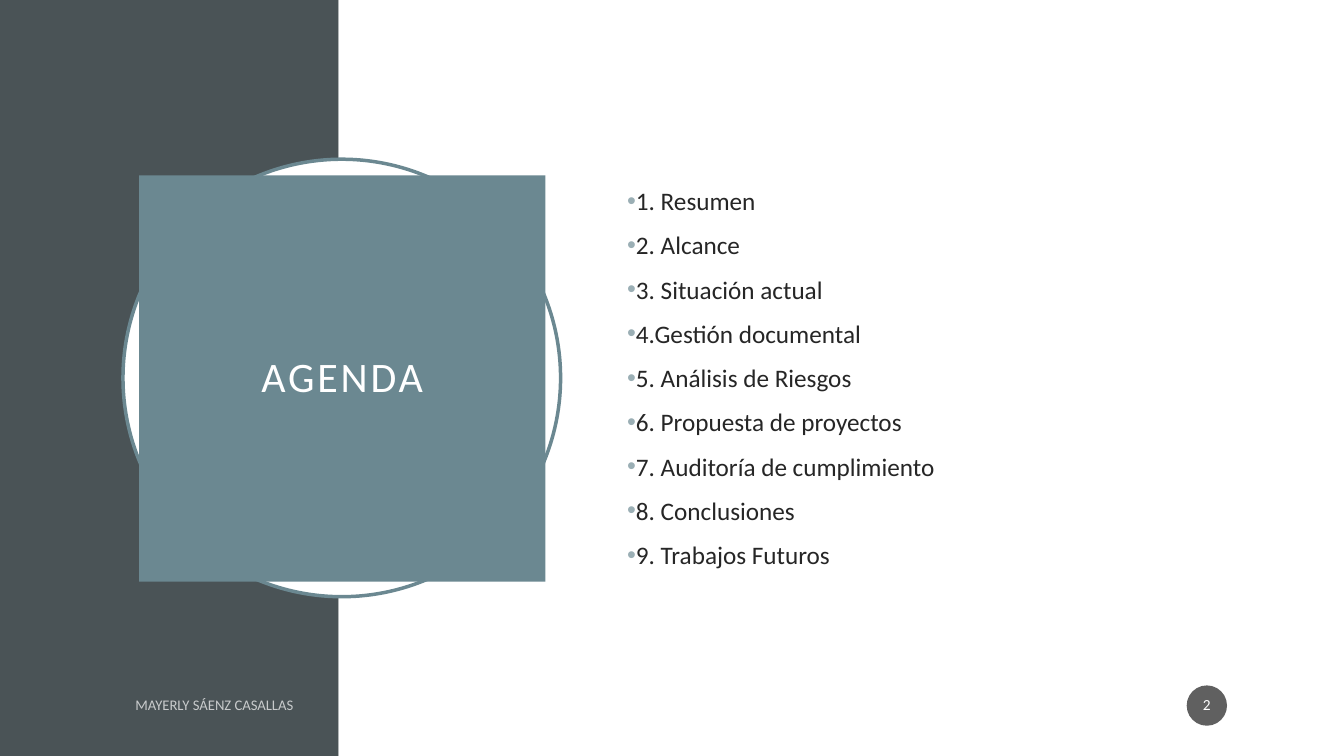
from lxml import etree
from pptx import Presentation
from pptx.dml.color import RGBColor
from pptx.enum.shapes import MSO_SHAPE
from pptx.enum.text import MSO_ANCHOR, MSO_AUTO_SIZE, PP_ALIGN
from pptx.oxml.ns import qn
from pptx.util import Inches, Pt

RECTANGLE, OVAL = MSO_SHAPE.RECTANGLE, MSO_SHAPE.OVAL
MIDDLE = MSO_ANCHOR.MIDDLE
NO_AUTOFIT = MSO_AUTO_SIZE.NONE
LEFT, CENTER, RIGHT = PP_ALIGN.LEFT, PP_ALIGN.CENTER, PP_ALIGN.RIGHT

WHITE, SLATE, TEAL = "FFFFFF", "4A5356", "6B8891"
BULLET, INK, BLACK = "9BAFB5", "262626", "1D1D1D"
TOPICS = [
    "1. Resumen",
    "2. Alcance",
    "3. Situación actual",
    "4.Gestión documental",
    "5. Análisis de Riesgos",
    "6. Propuesta de proyectos",
    "7. Auditoría de cumplimiento",
    "8. Conclusiones",
    "9. Trabajos Futuros",
]


def set_attributes(target, values):
    """Set every attribute of the dict on the target."""
    for name, value in values.items():
        setattr(target, name, value)


def set_fill(fill, color, opacity=100):
    """Give a fill a solid colour, with an opacity in percent."""
    fill.solid()
    fill.fore_color.rgb = RGBColor.from_string(color)
    if opacity < 100:
        color_element = next(fill._xPr.iter(qn("a:srgbClr")))
        etree.SubElement(color_element, qn("a:alpha"), val=str(opacity * 1000))


def place(shape, left, top, width, height):
    """Move and size a shape, in inches."""
    box = dict(left=left, top=top, width=width, height=height)
    set_attributes(shape, {name: Inches(value) for name, value in box.items()})


def add_panel(slide, kind, box, color, opacity=100, line=None):
    """Add a filled shape, outlined only when a line colour is given."""
    shape = slide.shapes.add_shape(kind, *map(Inches, box))
    shape.shadow.inherit = False
    set_fill(shape.fill, color, opacity)
    if line:
        set_fill(shape.line.fill, line)
        shape.line.width = Pt(2.5)
    else:
        shape.line.fill.background()
    return shape


def write(shape, lines, size, color, paragraph_format, opacity=100, insets=(0.1, 0.05)):
    """Write lines of text in a shape, one paragraph each."""
    frame = shape.text_frame
    side, edge = map(Inches, insets)
    set_attributes(frame, dict(
        word_wrap=True, auto_size=NO_AUTOFIT, vertical_anchor=MIDDLE,
        margin_left=side, margin_right=side, margin_top=edge, margin_bottom=edge,
        text="\n".join(lines)))
    for paragraph in frame.paragraphs:
        set_attributes(paragraph, paragraph_format)
        font = paragraph.runs[0].font
        set_attributes(font, dict(name="Calibri", size=Pt(size)))
        set_fill(font.fill, color, opacity)


def add_bullet(paragraph):
    """Give a paragraph a coloured bullet and a hanging first line."""
    properties = paragraph._p.get_or_add_pPr()
    properties.set("marL", "0")
    properties.set("indent", str(-Inches(0.25)))
    bullet_color = etree.SubElement(properties, qn("a:buClr"))
    etree.SubElement(bullet_color, qn("a:srgbClr"), val=BULLET)
    etree.SubElement(properties, qn("a:buFont"), typeface="Arial")
    etree.SubElement(properties, qn("a:buChar"), char="•")


def add_title(slide, text):
    """Turn the title placeholder into the filled circle in front of the ring."""
    title = slide.shapes.title
    place(title, 1.38, 1.74, 4.03, 4.03)
    geometry = etree.SubElement(title._element.spPr, qn("a:prstGeom"), prst="ellipse")
    etree.SubElement(geometry, qn("a:avLst"))
    set_fill(title.fill, TEAL)
    write(title, [text], 30, WHITE,
          dict(alignment=CENTER, line_spacing=0.9, space_after=Pt(6)), insets=(0.2, 0.2))
    run = title.text_frame.paragraphs[0].runs[0]
    run._r.get_or_add_rPr().set("spc", "200")
    slide.shapes._spTree.append(title._element)


def add_topics(slide, topics):
    """Fill the body placeholder with the bulleted topics."""
    body = slide.placeholders[1]
    place(body, 6.12, 1.53, 5.82, 4.43)
    write(body, topics, 18, INK,
          dict(alignment=LEFT, line_spacing=1.0, space_before=Pt(10), space_after=Pt(0)))
    for paragraph in body.text_frame.paragraphs:
        add_bullet(paragraph)
    slide.shapes._spTree.append(body._element)


def add_footer(slide, author, number):
    """Add the author name and the page number in its circle."""
    footer = slide.shapes.add_textbox(*map(Inches, (0.51, 6.82, 2.5, 0.35)))
    write(footer, [author], 10.5, WHITE,
          dict(alignment=RIGHT, space_after=Pt(6)), opacity=70)
    badge = add_panel(slide, OVAL, (11.77, 6.8, 0.4, 0.4), BLACK, opacity=70)
    write(badge, [number], 11, WHITE,
          dict(alignment=CENTER, line_spacing=0.9, space_after=Pt(6)), insets=(0.02, 0.05))


def main():
    """Build the agenda slide and save it."""
    presentation = Presentation()
    set_attributes(presentation, dict(slide_width=Inches(13.33), slide_height=Inches(7.5)))
    slide = presentation.slides.add_slide(presentation.slide_layouts[1])
    set_fill(slide.background.fill, WHITE)
    add_panel(slide, RECTANGLE, (0, 0, 3.36, 7.5), SLATE)
    add_panel(slide, RECTANGLE, (3.36, 0, 9.97, 7.5), WHITE)
    add_panel(slide, OVAL, (1.22, 1.58, 4.34, 4.34), WHITE, line=TEAL)
    add_title(slide, "AGENDA")
    add_topics(slide, TOPICS)
    add_footer(slide, "MAYERLY SÁENZ CASALLAS", "2")
    presentation.save("out.pptx")


if __name__ == "__main__":
    main()
